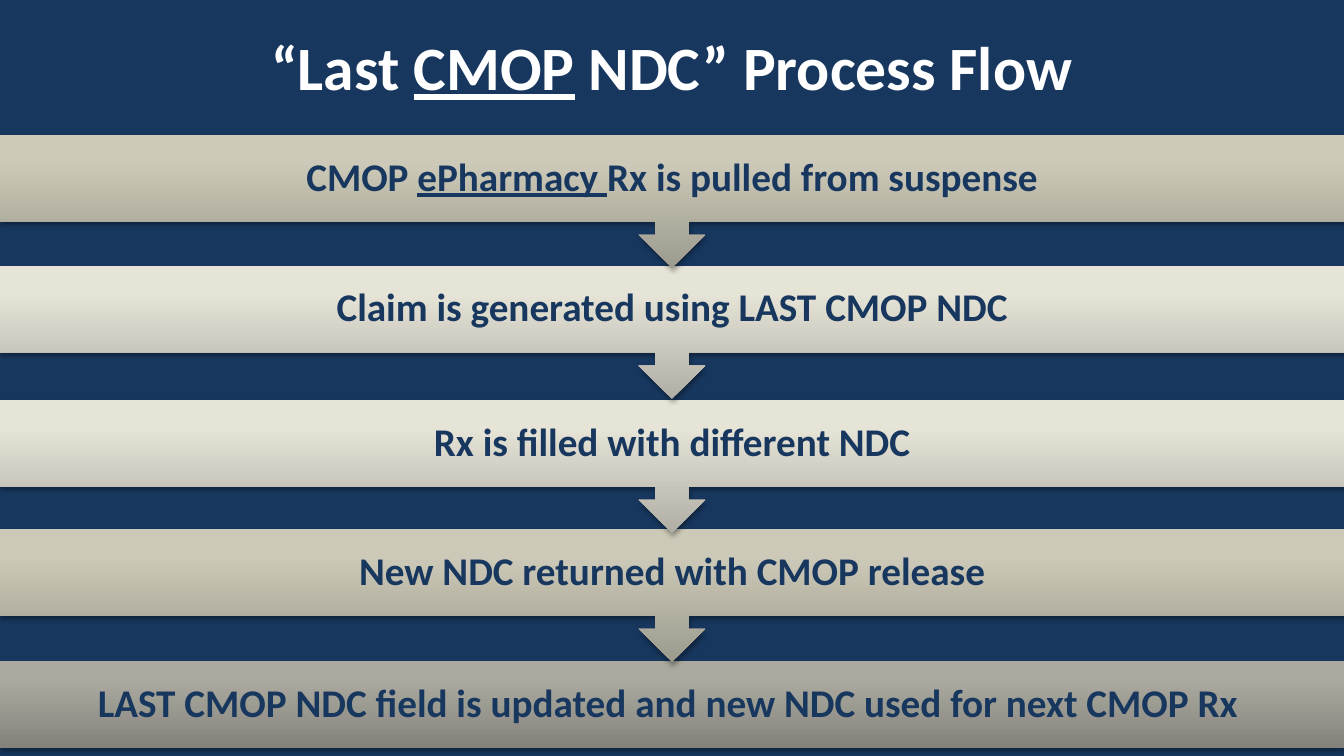
import pptx
import pptx.dml.color
import pptx.enum.shapes
import pptx.enum.text
import pptx.oxml
import pptx.oxml.ns
import pptx.util

Pt = pptx.util.Pt
SHAPES = pptx.enum.shapes.MSO_SHAPE
NAVY = "17375E"
WHITE = "FFFFFF"
TAN = ("9D9B8E", "CCC9B8", "CDCAB9")
CREAM = ("B1AFA5", "E6E3D7", "E7E4D8")
GRAY = ("84837B", "ACAAA0", "ADABA0")
SLIDE_WIDTH = 960
CALLOUT_HEIGHT = 95
FINAL_HEIGHT = 62

STEPS = [
    (96.5, TAN, ["CMOP ", "ePharmacy ", "Rx is pulled from suspense"]),
    (190, CREAM, ["Claim is generated using LAST CMOP NDC"]),
    (285.8, CREAM, ["Rx is filled with different NDC"]),
    (378, TAN, ["New NDC returned with CMOP release"]),
    (472.2, GRAY, ["LAST CMOP NDC field is updated and new NDC used for next CMOP Rx "]),
]


def color(value):
    return pptx.dml.color.RGBColor.from_string(value)


def drawing_element(content):
    return pptx.oxml.parse_xml(content.replace(">", f" {pptx.oxml.ns.nsdecls('a')}>", 1))


def write_text(text_frame, parts, size, text_color):
    text_frame.word_wrap = True
    text_frame.auto_size = pptx.enum.text.MSO_AUTO_SIZE.NONE
    text_frame.vertical_anchor = pptx.enum.text.MSO_ANCHOR.MIDDLE
    paragraph = text_frame.paragraphs[0]
    paragraph.alignment = pptx.enum.text.PP_ALIGN.CENTER
    for index, part in enumerate(parts):
        run = paragraph.add_run()
        run.text = part
        run.font.name = "Calibri"
        run.font.size = Pt(size)
        run.font.bold = True
        run.font.underline = index % 2 == 1
        run.font.color.rgb = color(text_color)
    return paragraph


def set_gradient(shape, colors):
    shape.fill.gradient()
    shape.fill.gradient_angle = 90
    stops = shape._element.spPr.find(".//" + pptx.oxml.ns.qn("a:gsLst"))
    stops.clear()
    for position, value in zip((0, 80, 100), colors):
        stops.append(drawing_element(
            f'<a:gs pos="{position * 1000}"><a:srgbClr val="{value}"/></a:gs>'))


def set_shadow(shape):
    shape.shadow.inherit = False
    effects = shape._element.spPr.find(pptx.oxml.ns.qn("a:effectLst"))
    effects.append(drawing_element(
        '<a:outerShdw blurRad="40000" dist="23000" dir="5400000" rotWithShape="0">'
        '<a:srgbClr val="000000"><a:alpha val="35000"/></a:srgbClr></a:outerShdw>'))


def add_step(slide, kind, top, height, colors, parts):
    shape = slide.shapes.add_shape(kind, 0, Pt(top), Pt(SLIDE_WIDTH), Pt(height))
    set_gradient(shape, colors)
    shape.line.fill.background()
    set_shadow(shape)
    text_frame = shape.text_frame
    text_frame.margin_left = text_frame.margin_right = Pt(15.8)
    text_frame.margin_top = text_frame.margin_bottom = Pt(15.8)
    paragraph = write_text(text_frame, parts, 28, NAVY)
    paragraph.line_spacing = 0.9


def add_title(slide, parts):
    title = slide.shapes.title
    title.left, title.top, title.width, title.height = Pt(120), Pt(17.3), Pt(720), Pt(60)
    write_text(title.text_frame, parts, 44, WHITE)


def main():
    presentation = pptx.Presentation()
    presentation.slide_width = Pt(SLIDE_WIDTH)
    presentation.slide_height = Pt(540)
    slide = presentation.slides.add_slide(presentation.slide_layouts[5])
    slide.background.fill.solid()
    slide.background.fill.fore_color.rgb = color(NAVY)

    add_title(slide, ["“Last ", "CMOP", " NDC” Process Flow"])
    top, colors, parts = STEPS[-1]
    add_step(slide, SHAPES.RECTANGLE, top, FINAL_HEIGHT, colors, parts)
    for top, colors, parts in reversed(STEPS[:-1]):
        add_step(slide, SHAPES.DOWN_ARROW_CALLOUT, top, CALLOUT_HEIGHT, colors, parts)

    presentation.save("out.pptx")


if __name__ == "__main__":
    main()
